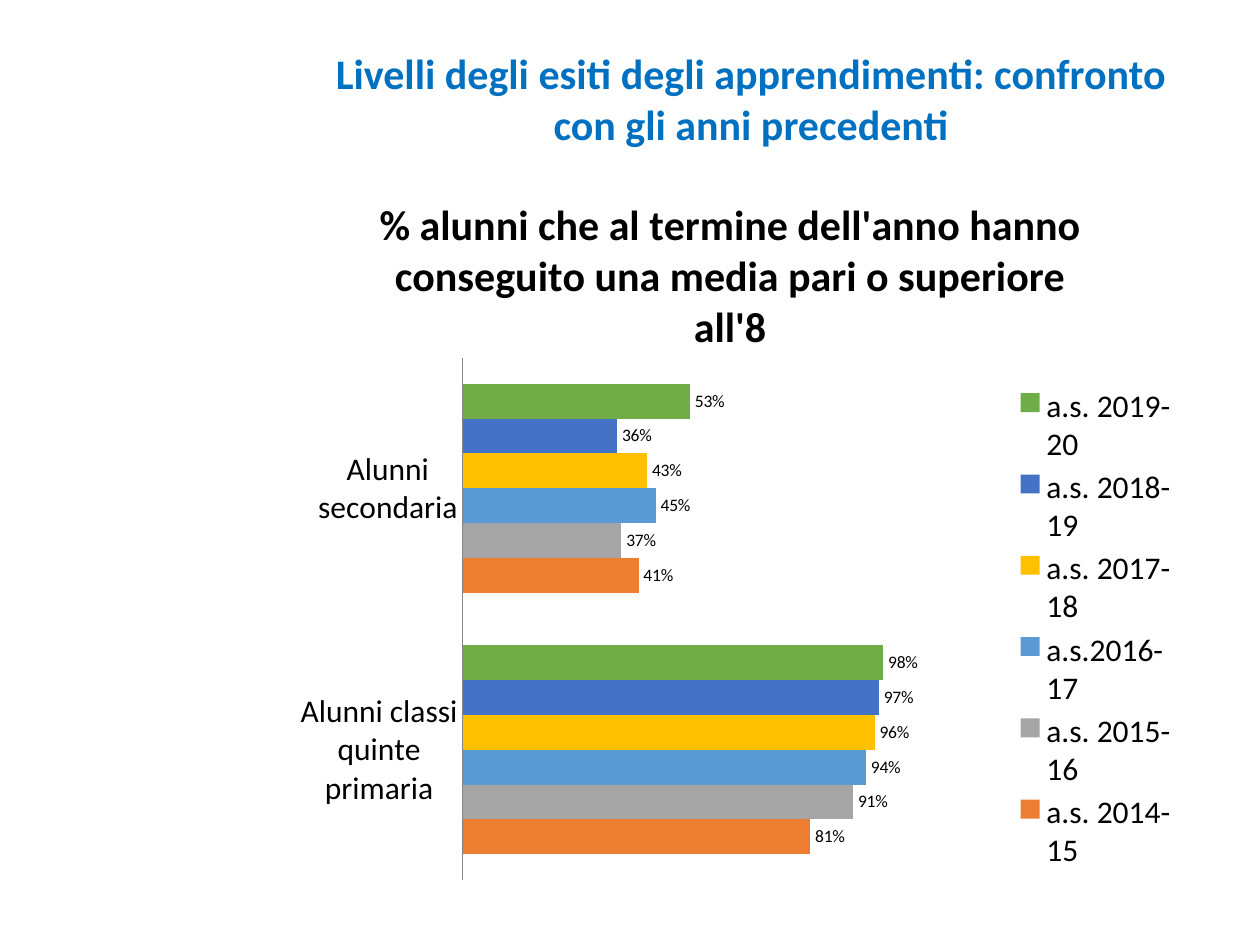
"""Build a slide comparing pupils' results across school years in a bar chart."""
from lxml import etree
from pptx import Presentation
from pptx.chart.data import CategoryChartData
from pptx.dml.color import RGBColor
from pptx.enum.chart import XL_CHART_TYPE, XL_LABEL_POSITION, XL_LEGEND_POSITION, XL_TICK_LABEL_POSITION, XL_TICK_MARK
from pptx.enum.text import PP_ALIGN
from pptx.oxml.ns import qn
from pptx.util import Inches, Pt

BAR = XL_CHART_TYPE.BAR_CLUSTERED
OUTSIDE = XL_LABEL_POSITION.OUTSIDE_END
RIGHT = XL_LEGEND_POSITION.RIGHT
NO_LABELS = XL_TICK_LABEL_POSITION.NONE
NO_TICK = XL_TICK_MARK.NONE
CENTER = PP_ALIGN.CENTER

FONT = "Calibri"
COLORS = {"heading": "0070C0", "text": "000000", "axis": "868686"}
HEADING = "Livelli degli esiti degli apprendimenti: confronto con gli anni precedenti"
CHART_TITLE = "% alunni che al termine dell'anno hanno conseguito una media pari o superiore all'8"
CATEGORIES = ["Alunni classi quinte primaria", "Alunni secondaria"]
SERIES = [
    ("a.s. 2014-15", (0.81, 0.41), "ED7D31"),
    ("a.s. 2015-16", (0.91, 0.37), "A5A5A5"),
    ("a.s.2016-17", (0.94, 0.45), "5B9BD5"),
    ("a.s. 2017-18", (0.96, 0.43), "FFC000"),
    ("a.s. 2018-19", (0.97, 0.36), "4472C4"),
    ("a.s. 2019-20", (0.98, 0.53), "70AD47"),
]
PLOT_BOX = (0.207, 0.266, 0.564, 0.732)
LEGEND_BOX = (0.81, 0.3, 0.18, 0.69)


def rgb(name):
    return RGBColor.from_string(COLORS[name])


def set_font(font, size, color, bold=False):
    font.name, font.size, font.bold = FONT, Pt(size), bold
    font.color.rgb = rgb(color)


def make_layout(box, inner=False):
    layout = etree.Element(qn("c:layout"))
    manual = etree.SubElement(layout, qn("c:manualLayout"))
    items = [("layoutTarget", "inner")] if inner else []
    items += [("xMode", "edge"), ("yMode", "edge"), *zip("xywh", box)]
    for tag, value in items:
        etree.SubElement(manual, qn(f"c:{tag}")).set("val", str(value))
    return layout


def add_heading(slide):
    tf = slide.shapes.add_textbox(Inches(2.5), Inches(0.33), Inches(6.92), Inches(0.91)).text_frame
    tf.word_wrap = True
    p = tf.paragraphs[0]
    p.text, p.alignment = HEADING, CENTER
    set_font(p.font, 24, "heading", True)


def add_results_chart(slide):
    data = CategoryChartData(number_format="0%")
    data.categories = CATEGORIES
    for name, values, _ in SERIES:
        data.add_series(name, values)
    chart = slide.shapes.add_chart(
        BAR, Inches(2.17), Inches(1.33), Inches(7.25), Inches(5.67), data).chart
    set_font(chart.font, 10, "text")

    chart.has_title = True
    p = chart.chart_title.text_frame.paragraphs[0]
    p.text = CHART_TITLE
    set_font(p.font, 24, "text", True)
    chart.chart_title.include_in_layout = False

    plot = chart.plots[0]
    plot.gap_width, plot.overlap, plot.vary_by_categories = 150, 0, False
    for series, (_, _, color) in zip(plot.series, SERIES):
        series.format.fill.solid()
        series.format.fill.fore_color.rgb = RGBColor.from_string(color)
        labels = series.data_labels
        labels.show_value, labels.position = True, OUTSIDE
        labels.number_format, labels.number_format_is_linked = "0%", False
        set_font(labels.font, 10, "text")

    category_axis, value_axis = chart.category_axis, chart.value_axis
    category_axis.major_tick_mark = NO_TICK
    category_axis.format.line.color.rgb = rgb("axis")
    set_font(category_axis.tick_labels.font, 18, "text")
    value_axis.minimum_scale, value_axis.maximum_scale = 0, 1.2
    value_axis.has_major_gridlines = False
    value_axis.tick_label_position = NO_LABELS
    value_axis.visible = False

    chart.has_legend = True
    legend = chart.legend
    legend.position, legend.include_in_layout = RIGHT, False
    set_font(legend.font, 18, "text")

    plot_area = chart.element.find(f".//{qn('c:plotArea')}")
    for old in plot_area.findall(qn("c:layout")):
        plot_area.remove(old)
    plot_area.insert(0, make_layout(PLOT_BOX, True))
    legend_xml = chart.element.find(f".//{qn('c:legend')}")
    for old in legend_xml.findall(qn("c:layout")):
        legend_xml.remove(old)
    legend_xml.find(qn("c:legendPos")).addnext(make_layout(LEGEND_BOX))


def main():
    prs = Presentation()
    prs.slide_width, prs.slide_height = Inches(10), Inches(7.5)
    slide = prs.slides.add_slide(prs.slide_layouts[6])
    add_results_chart(slide)
    add_heading(slide)
    prs.save("out.pptx")


if __name__ == "__main__":
    main()
